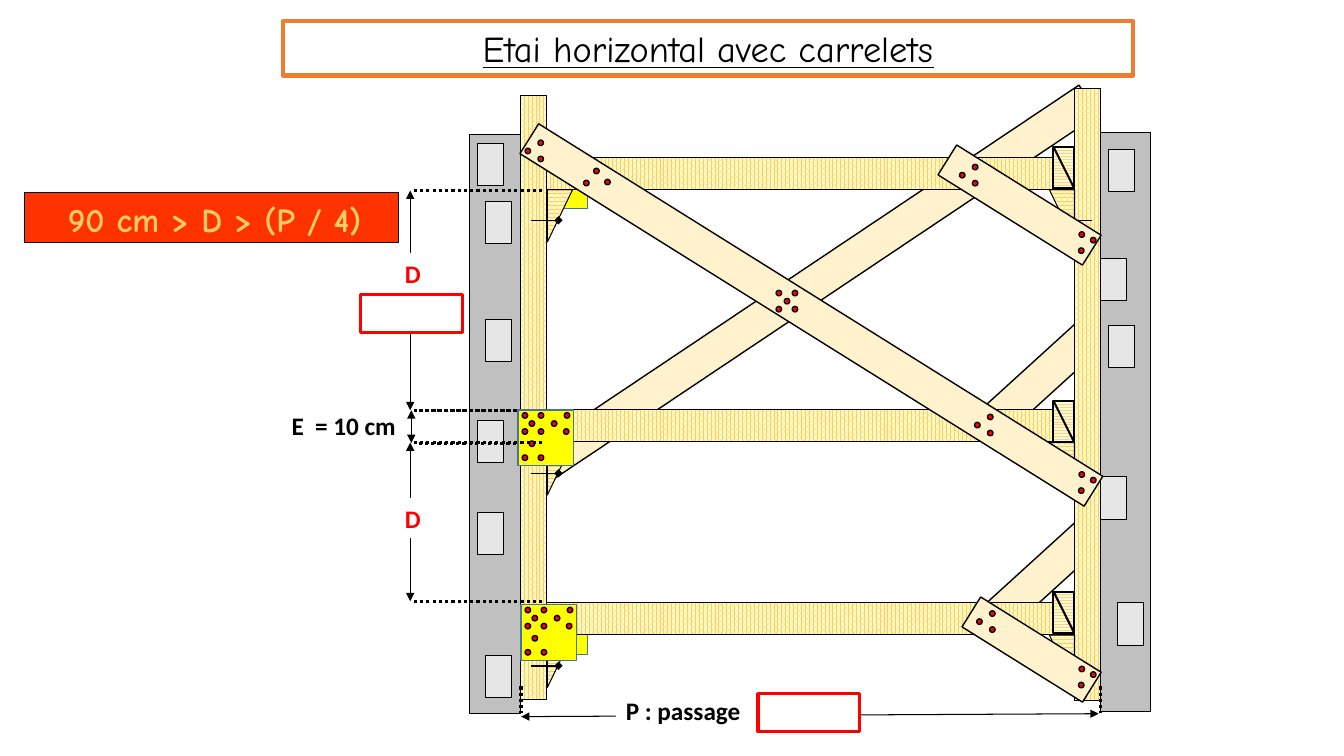
from dataclasses import dataclass

from lxml import etree
from pptx import Presentation
from pptx import util as u
from pptx.dml.color import RGBColor
from pptx.enum import dml, shapes, text
from pptx.oxml import ns


@dataclass(frozen=True)
class Theme:
    ink: str = "000000"
    white: str = "FFFFFF"
    red: str = "FF0000"
    alert: str = "FF3300"
    frame: str = "ED7D31"
    plank: str = "FFF2CC"
    plate: str = "FFFF00"
    edge: str = "43739E"
    wall: str = "C0C0C0"
    brick: str = "E7E6E6"
    grain: str = "FFCC66"
    knot: str = "FFCC99"
    pale: str = "FFFFCC"
    head: str = "Comic Neue"
    body: str = "Calibri"
    big: float = 26
    mid: float = 24
    small: float = 18


T = Theme()
RECT = shapes.MSO_SHAPE.RECTANGLE
OVAL = shapes.MSO_SHAPE.OVAL
MID = text.PP_ALIGN.CENTER
LEFT = text.PP_ALIGN.LEFT
WOOD = (dml.MSO_PATTERN.PERCENT_75, T.grain, T.pale)
BLOCK = (dml.MSO_PATTERN.ZIG_ZAG, T.knot, T.pale)

NAILS = {
    "plate": [(2.9, 1.8), (14.4, 1.8), (33, 1.8), (7.9, 7.6), (23.8, 7.6), (2.9, 13.3),
              (14.4, 13.3), (32.4, 13.3), (7.9, 22), (2.9, 32), (14.4, 32)],
    "cross": [(0, 0), (11.5, 0), (5.8, 5.8), (0, 11.5), (11.5, 11.5)],
    "left": [(9.2, 0), (0, 5.8), (9.2, 11.5)],
    "right": [(0.4, 0), (8.6, 4), (0, 11.5)],
    "top": [(7.2, 0), (0, 8.6), (15.1, 7.9)],
}


def rgb(code):
    return RGBColor.from_string(code)


def place(item, x, y, w, h):
    item.left, item.top, item.width, item.height = (u.Pt(v) for v in (x, y, w, h))


def paint(item, fill, line, width):
    item.shadow.inherit = False
    if isinstance(fill, tuple):
        item.fill.patterned()
        item.fill.pattern = fill[0]
        item.fill.fore_color.rgb = rgb(fill[1])
        item.fill.back_color.rgb = rgb(fill[2])
    elif fill:
        item.fill.solid()
        item.fill.fore_color.rgb = rgb(fill)
    else:
        item.fill.background()
    if line:
        item.line.color.rgb = rgb(line)
        item.line.width = u.Pt(width)
    else:
        item.line.fill.background()


def box(slide, x, y, w, h, fill, line=T.ink, width=0.75, turn=0, kind=RECT):
    item = slide.shapes.add_shape(kind, *(u.Pt(v) for v in (x, y, w, h)))
    paint(item, fill, line, width)
    item.rotation = turn
    return item


def turned(slide, mid, y, w, h, turn, fill, width):
    box(slide, mid - w / 2, y - h / 2, w, h, fill, T.ink, width, turn)


def plank(slide, mid, y, size, turn):
    turned(slide, mid, y, size, 25.2, turn, T.plank, 1)


def line(slide, x1, y1, x2, y2, width=0.75, dots=False, head=None, tail=None):
    item = slide.shapes.add_connector(
        shapes.MSO_CONNECTOR.STRAIGHT, *(u.Pt(v) for v in (x1, y1, x2, y2)))
    item.line.color.rgb = rgb(T.ink)
    item.line.width = u.Pt(width)
    if dots:
        item.line.dash_style = dml.MSO_LINE.ROUND_DOT
    for tag, end in (("a:headEnd", head), ("a:tailEnd", tail)):
        if end:
            etree.SubElement(item.line._get_or_add_ln(), ns.qn(tag), type=end)
    etree.SubElement(item._element.spPr, ns.qn("a:effectLst"))


def arrow(slide, x1, y1, x2, y2):
    line(slide, x1, y1, x2, y2, head="triangle", tail="triangle")


def span(slide, x, top, base, left, right):
    arrow(slide, x, base, x, top)
    for y in (top, base):
        line(slide, right, y, left, y, 2.25, dots=True)


def write(item, words, size, font, color, bold=True, align=MID):
    frame = item.text_frame
    frame.text = words
    para = frame.paragraphs[0]
    para.alignment = align
    style = para.runs[0].font
    style.size, style.name, style.bold = u.Pt(size), font, bold
    style.color.rgb = rgb(color)
    return frame


def label(slide, words, x, y, w, h=28.8, color=T.ink, fill=T.white, align=MID):
    item = box(slide, x, y, w, h, fill, None)
    frame = write(item, words, T.small, T.body, color, align=align)
    frame.word_wrap = True
    frame.vertical_anchor = text.MSO_ANCHOR.TOP


def title(slide):
    item = slide.shapes.title
    place(item, 202.3, 15.1, 607, 38.9)
    paint(item, None, T.frame, 3)
    frame = write(item, "Etai horizontal avec carrelets", T.big, T.head, T.ink, False)
    frame.auto_size = text.MSO_AUTO_SIZE.NONE
    frame.vertical_anchor = text.MSO_ANCHOR.MIDDLE
    frame.paragraphs[0].runs[0].font.underline = True


def rule(slide):
    box(slide, 17.3, 137.5, 267.1, 36, T.alert)
    item = slide.shapes.add_textbox(*(u.Pt(v) for v in (26.6, 138.2, 253.4, 36.7)))
    frame = write(item, "90 cm > D > (P / 4)", T.mid, T.head, T.grain)
    frame.word_wrap = False
    frame.vertical_anchor = text.MSO_ANCHOR.MIDDLE


def wall(slide, x, y, bricks):
    box(slide, x, y, 36, 414, T.wall)
    for left, top in bricks:
        box(slide, left, top, 18.4, 30.2, T.brick)


def wedge(slide, top, x, tip, head, tail):
    path = slide.shapes.build_freeform(u.Pt(x), u.Pt(top + 37.4))
    path.add_line_segments([(u.Pt(x), u.Pt(top)), (u.Pt(tip), u.Pt(top))], close=True)
    paint(path.convert_to_shape(), WOOD, T.ink, 0.75)
    line(slide, head, top + 22, tail, top + 22, 1, head="diamond")


def nails(slide, kind, x, y):
    for dx, dy in NAILS[kind]:
        box(slide, x + dx, y + dy, 3.9, 3.9, T.red, T.ink, 1, kind=OVAL)


def plate(slide, x, y):
    box(slide, x, y, 39.6, 39.6, T.plate, T.edge, 1)
    nails(slide, "plate", x, y)


def strut(slide, y):
    turned(slide, 582.5, y, 23, 385.2, 270, WOOD, 0.75)


def stop(slide, y):
    turned(slide, 760, y, 29.5, 15.1, 90, BLOCK, 1.5)
    line(slide, 767.5, y + 15, 752.5, y - 15, 1.5)


def frame(slide):
    for y in (274, 415.8):
        plank(slide, 739.8, y, 103, 317.7)
    for y in (112.3, 430.6):
        box(slide, 376.6, y, 43.2, 36.7, T.plate, T.edge, 1)
    plank(slide, 580.3, 203.4, 475.2, 326.2)
    for y in (441.7, 124.2, 304.2):
        strut(slide, y)
    for y in (119.9, 437.4, 301.3):
        stop(slide, y)
    wall(slide, 786.2, 94.3, [(798.5, 430.6), (786.2, 340.6), (792, 232.6),
                              (786.2, 184.3), (792, 106.6)])
    wall(slide, 335.5, 95.8, [(347, 468), (341.3, 365.8), (341.3, 300.2),
                              (347, 228.2), (347, 144), (341.3, 102.2)])
    box(slide, 767.5, 63.4, 18.4, 437, WOOD)
    box(slide, 371.5, 68.4, 18.7, 431.3, WOOD)


def sizes(slide):
    span(slide, 293, 136.1, 293, 295.9, 387.4)
    span(slide, 293.8, 293, 316.5, 297.4, 395.3)
    label(slide, "E  = 10 cm", 190.8, 289.4, 109.4, fill=None)
    label(slide, "D", 276.5, 180.7, 36.7, color=T.red)
    arrow(slide, 372.2, 511.9, 784.8, 509.8)
    for x in (786.2, 372.2):
        line(slide, x, 490.3, x, 509, 2.25, dots=True)
    label(slide, "P : passage", 439.9, 493.2, 114.5, align=LEFT)
    for x, y in ((257.8, 210.2), (541.4, 495.4)):
        box(slide, x, y, 72.7, 27.4, T.white, T.red, 2.25)


def joints(slide):
    for top in (135.4, 316.1, 453.6):
        wedge(slide, top, 391, 409, 398.9, 379.4)
        wedge(slide, top, 767.5, 749.5, 759.6, 779.8)
    plank(slide, 579.6, 225, 475.2, 32)
    plate(slide, 372.2, 432)
    plate(slide, 370.1, 293)
    plank(slide, 728.3, 146.5, 121.7, 32)
    plank(slide, 736.9, 464, 101.5, 32)
    nails(slide, "cross", 554.4, 207.4)
    for x, y in ((697.7, 436.3), (696.2, 295.9), (685.4, 117.4), (375.1, 100.1)):
        nails(slide, "left", x, y)
    for y in (337, 475.9, 165.6):
        nails(slide, "right", 770.4, y)
    nails(slide, "top", 416.9, 120.2)


def main():
    deck = Presentation()
    deck.slide_width, deck.slide_height = u.Pt(960), u.Pt(540)
    slide = deck.slides.add_slide(deck.slide_layouts[5])
    title(slide)
    frame(slide)
    sizes(slide)
    rule(slide)
    joints(slide)
    span(slide, 293, 316.1, 429.4, 295.9, 387.4)
    label(slide, "D", 276.5, 355.7, 36.7, color=T.red)
    deck.save("out.pptx")


if __name__ == "__main__":
    main()
